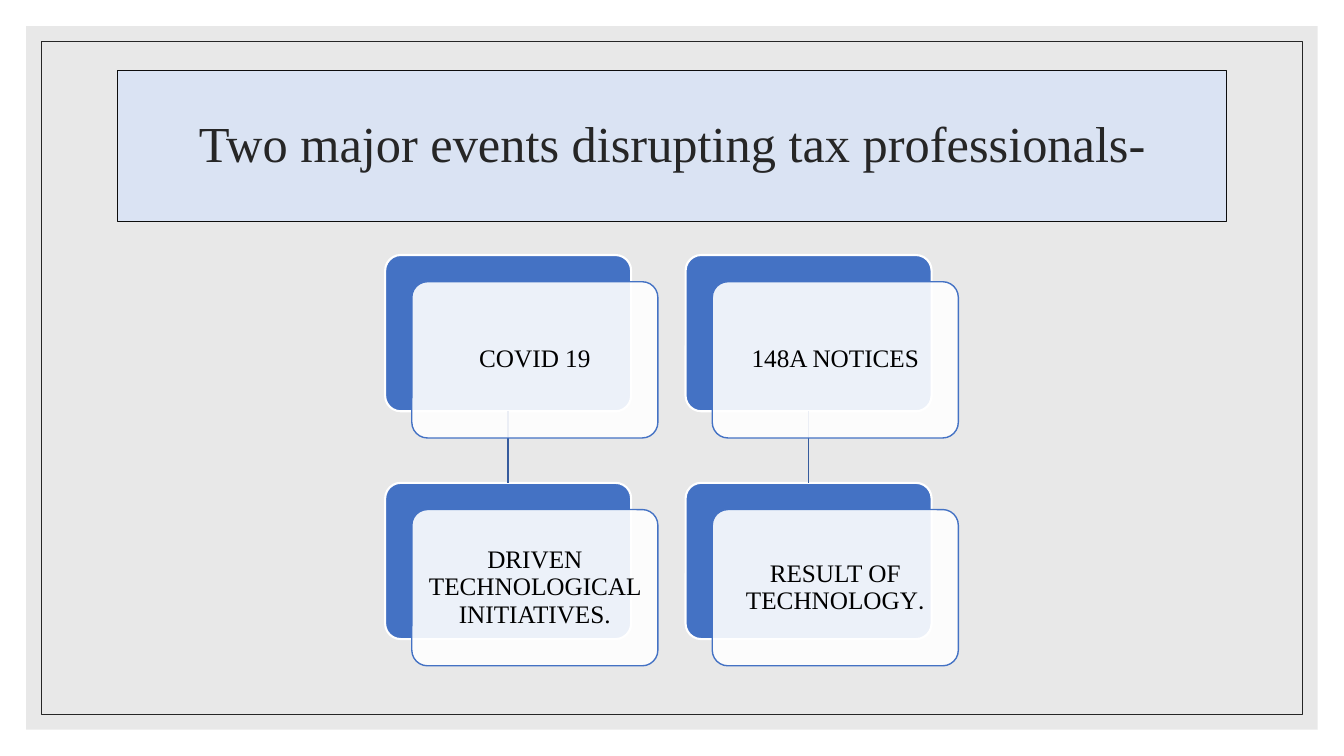
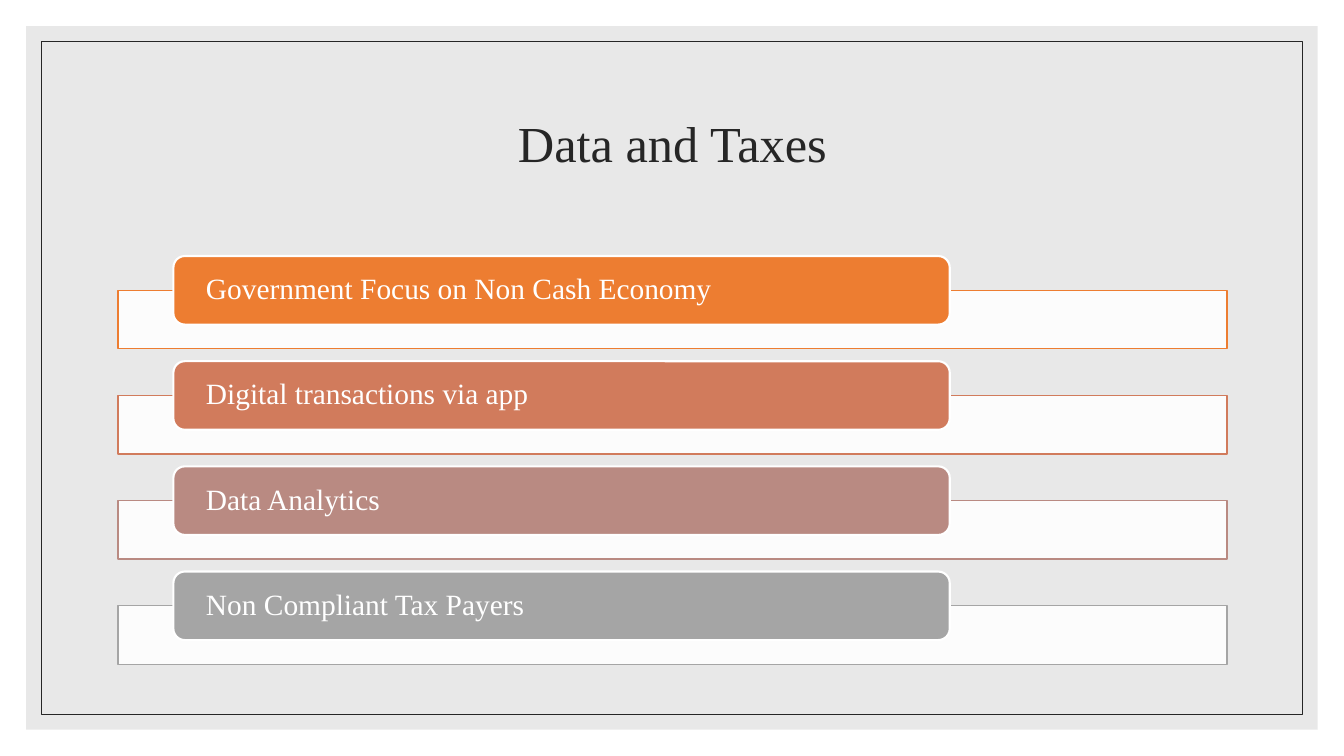
from lxml import etree
from pptx import Presentation
from pptx.dml.color import RGBColor
from pptx.enum.shapes import MSO_CONNECTOR, MSO_SHAPE
from pptx.enum.text import MSO_ANCHOR, PP_ALIGN
from pptx.oxml.ns import qn
from pptx.util import Inches, Pt

RECT, ROUND = MSO_SHAPE.RECTANGLE, MSO_SHAPE.ROUNDED_RECTANGLE
STRAIGHT = MSO_CONNECTOR.STRAIGHT
LEFT, CENTER = PP_ALIGN.LEFT, PP_ALIGN.CENTER
MIDDLE = MSO_ANCHOR.MIDDLE
TOP_SIDE, BOTTOM_SIDE = 0, 2

# Shared style
W, H = 13.33, 7.5
FONT, ALT_FONT = "Times New Roman", "Calibri"
COLORS = {
    "white": "FFFFFF", "black": "000000", "panel": "D9D9D9",
    "ink": "262626", "edge": "0D0D0D", "pale": "DAE3F3",
    "blue": "4472C4", "link": "365B9D", "orange": "ED7D31",
    "rust": "D17B5C", "rose": "B98A82", "gray": "A5A5A5",
}
CONTENT_X, CONTENT_W = 1.17, 11

# Card grid: columns and rows, front card shifted from the one behind
CARD_X, CARD_Y, CARD_W, CARD_H = 3.82, 2.53, 2.44, 1.55
COL_PITCH, ROW_PITCH, SHIFT = 2.98, 2.26, 0.265
CARD_COLUMNS = [
    [[("COVID 19", FONT)], [("DRIVEN TECHNOLOGICAL INITIATIVES.", FONT)]],
    [[("148A NOTICES", FONT)],
     [("RESULT OF TECHNOLOGY", FONT), (".", ALT_FONT)]],
]

# Label rows, evenly spread between the first and the last
FIRST_ROW, LAST_ROW = 2.54, 5.67
LABELS = [
    ("Government Focus on Non Cash Economy", "orange"),
    ("Digital transactions via app", "rust"),
    ("Data Analytics", "rose"),
    ("Non Compliant Tax Payers", "gray"),
]


def rgb(name):
    return RGBColor.from_string(COLORS[name])


def add_box(slide, kind, x, y, w, h, fill=None, line=None, width=1.0,
            opacity=100, radius=None):
    sp = slide.shapes.add_shape(kind, Inches(x), Inches(y), Inches(w), Inches(h))
    sp.shadow.inherit = False
    if radius is not None:
        sp.adjustments[0] = radius
    if fill:
        sp.fill.solid()
        sp.fill.fore_color.rgb = rgb(fill)
        if opacity < 100:
            color = sp.fill._xPr.find(qn("a:solidFill"))[0]
            etree.SubElement(color, qn("a:alpha")).set("val", str(opacity * 1000))
    else:
        sp.fill.background()
    if line:
        sp.line.color.rgb = rgb(line)
        sp.line.width = Pt(width)
    else:
        sp.line.fill.background()
    return sp


def set_text(sp, runs, size, color, align=CENTER, inset_x=0.1, inset_y=0.05):
    tf = sp.text_frame
    tf.word_wrap = True
    tf.vertical_anchor = MIDDLE
    tf.margin_left = tf.margin_right = Inches(inset_x)
    tf.margin_top = tf.margin_bottom = Inches(inset_y)
    p = tf.paragraphs[0]
    p.alignment = align
    p.line_spacing = 0.9
    p.font.size = Pt(size)
    p.font.color.rgb = rgb(color)
    for text, font in runs:
        r = p.add_run()
        r.text = text
        r.font.name = font


def add_link(slide, upper, lower):
    link = slide.shapes.add_connector(STRAIGHT, 0, 0, 0, 0)
    link.begin_connect(upper, BOTTOM_SIDE)
    link.end_connect(lower, TOP_SIDE)
    link.line.color.rgb = rgb("link")
    link.line.width = Pt(1)
    etree.SubElement(link._element.spPr, qn("a:effectLst"))


def add_framed_slide(prs, title, fill=None, line=None):
    slide = prs.slides.add_slide(prs.slide_layouts[6])
    # Panel and thin frame, centred on the slide
    for margin, style in ((0.26, {"fill": "panel", "opacity": 60}),
                          (0.41, {"line": "ink", "width": 0.5})):
        add_box(slide, RECT, margin, margin, W - 2 * margin, H - 2 * margin, **style)
    sp = add_box(slide, RECT, CONTENT_X, 0.7, CONTENT_W, 1.5, fill, line, 0.75)
    set_text(sp, [(title, FONT)], 36, "ink")
    return slide


def add_card_column(slide, col, cards):
    x = CARD_X + col * COL_PITCH
    tops = [CARD_Y + row * ROW_PITCH for row in range(len(cards))]
    backs = [add_box(slide, ROUND, x, y, CARD_W, CARD_H, "blue", "white", 1.5,
                     radius=0.1) for y in tops]
    for upper, lower in zip(backs, backs[1:]):
        add_link(slide, upper, lower)
    for y, runs in zip(tops, cards):
        sp = add_box(slide, ROUND, x + SHIFT, y + SHIFT, CARD_W, CARD_H,
                     "white", "blue", opacity=90, radius=0.1)
        set_text(sp, runs, 18, "black", inset_x=0.07, inset_y=0.07)


def add_label_row(slide, y, text, color):
    add_box(slide, RECT, CONTENT_X, y + 0.34, CONTENT_W, 0.58, "white", color,
            opacity=90)
    sp = add_box(slide, ROUND, CONTENT_X + 0.05 * CONTENT_W, y,
                 0.7 * CONTENT_W, 0.68, color, "white", 1.5)
    set_text(sp, [(text, FONT)], 21, "white", LEFT, inset_x=0.29, inset_y=0)


def main():
    prs = Presentation()
    prs.slide_width, prs.slide_height = Inches(W), Inches(H)

    # Slide 1: linked cards
    slide = add_framed_slide(prs, "Two major events disrupting tax professionals-",
                             "pale", "edge")
    for col, cards in enumerate(CARD_COLUMNS):
        add_card_column(slide, col, cards)

    # Slide 2: labelled rows
    slide = add_framed_slide(prs, "Data and Taxes")
    pitch = (LAST_ROW - FIRST_ROW) / (len(LABELS) - 1)
    for row, (text, color) in enumerate(LABELS):
        add_label_row(slide, FIRST_ROW + row * pitch, text, color)

    prs.save("out.pptx")


if __name__ == "__main__":
    main()
